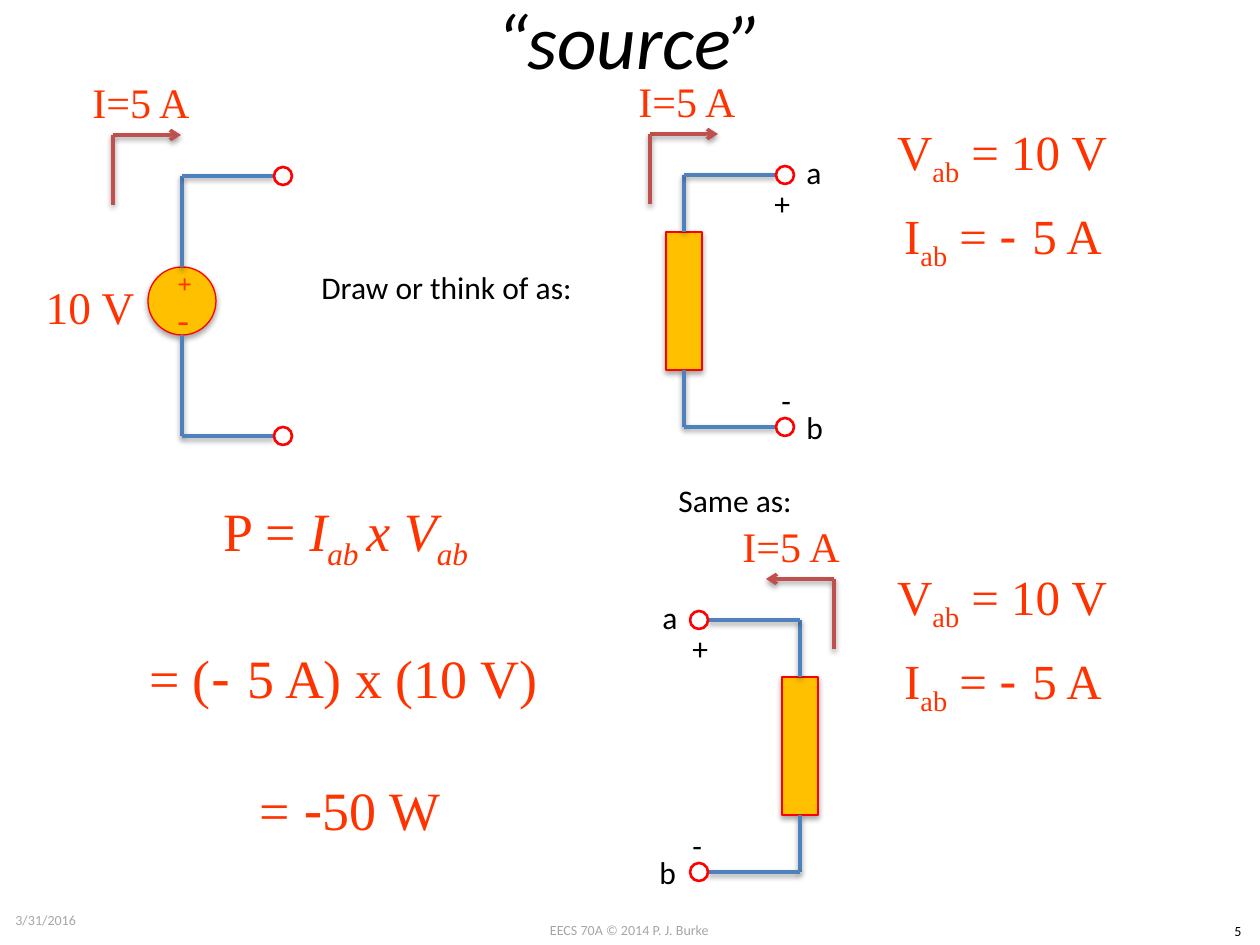
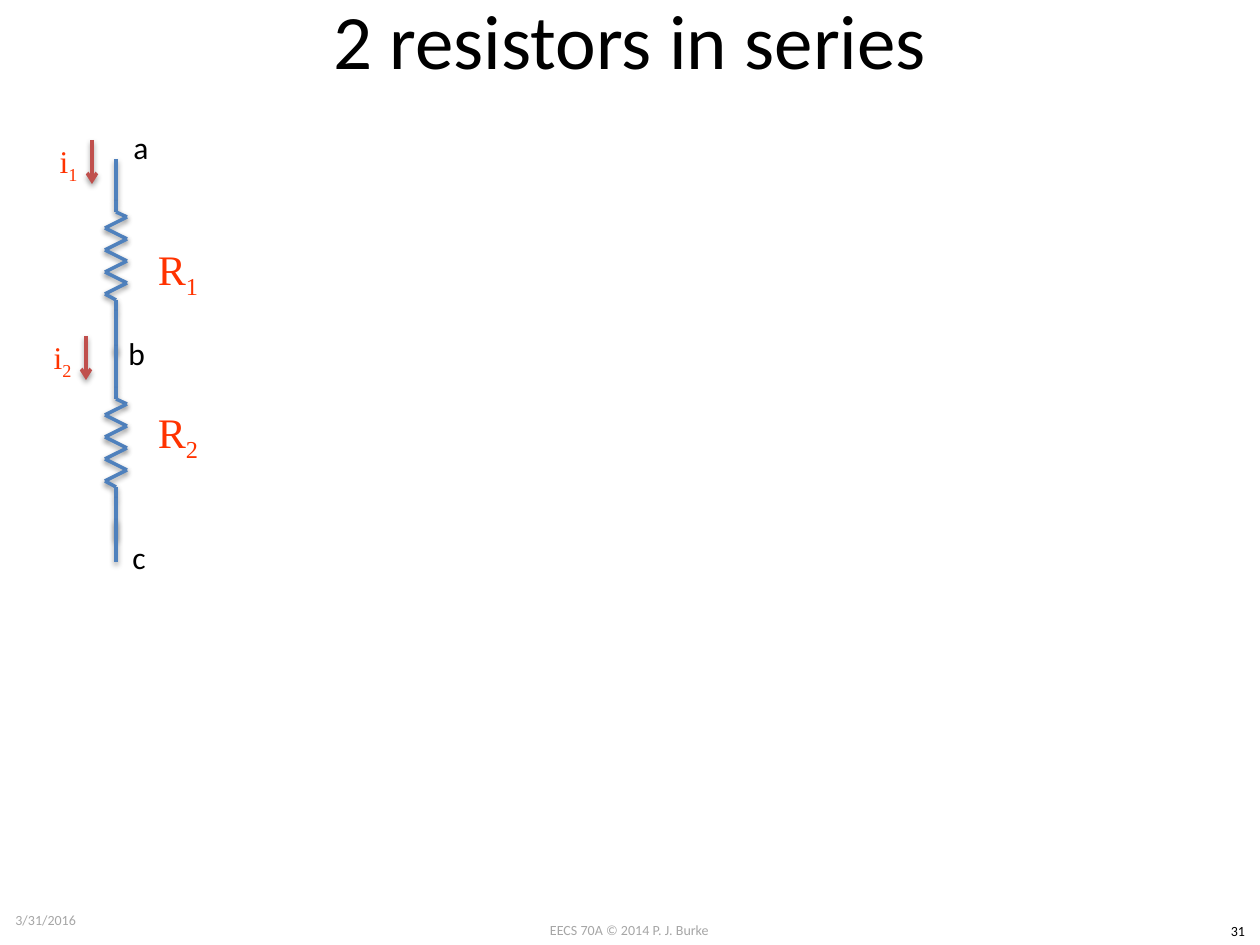
from dataclasses import dataclass
from itertools import pairwise

from lxml import etree
from pptx import Presentation
from pptx.dml.color import RGBColor
from pptx.enum.shapes import MSO_CONNECTOR, MSO_SHAPE
from pptx.enum.text import MSO_ANCHOR, PP_ALIGN
from pptx.oxml.ns import qn
from pptx.util import Emu, Pt

STRAIGHT = MSO_CONNECTOR.STRAIGHT
OVAL, RECTANGLE = MSO_SHAPE.OVAL, MSO_SHAPE.RECTANGLE
LEFT, CENTER = PP_ALIGN.LEFT, PP_ALIGN.CENTER
TOP, MIDDLE = MSO_ANCHOR.TOP, MSO_ANCHOR.MIDDLE
RECT_TOP, RECT_BOTTOM = 0, 2
EMU_PER_INCH, PX_PER_INCH = 914400, 126


@dataclass(frozen=True)
class Theme:
    # Colours
    black: str = "000000"
    white: str = "FFFFFF"
    muted: str = "A6A6A6"
    formula: str = "FF3300"
    wire: str = "4F81BD"
    current: str = "C0504D"
    element: str = "FFC000"
    outline: str = "FF0000"
    # Fonts
    sans: str = "Calibri"
    serif: str = "Times New Roman"
    minus: str = "DejaVu Sans"
    # Type sizes in points
    title: float = 44
    power: float = 30.8
    equation: float = 28
    voltage: float = 25.9
    symbol: float = 24
    label: float = 18
    footer: float = 8
    # Line widths in points
    wire_width: float = 2
    outline_width: float = 1.5


THEME = Theme()


@dataclass(frozen=True)
class Part:
    """A stretch of text with its own formatting."""
    text: str
    subscript: bool = False
    italic: bool = False
    bold: bool = False
    font: str = ""


def px(length):
    return Emu(round(length * EMU_PER_INCH / PX_PER_INCH))


def rgb(colour):
    return RGBColor.from_string(colour)


# Drawing helpers
def add_text(slide, box, paragraphs, size, colour=THEME.black, font=THEME.sans,
             align=CENTER, anchor=MIDDLE, wrap=True, gaps=()):
    """Each paragraph is a list of parts; gaps are the spaces before them."""
    shape = slide.shapes.add_textbox(*map(px, box))
    frame = shape.text_frame
    frame.word_wrap = wrap
    frame.vertical_anchor = anchor
    for index, parts in enumerate(paragraphs):
        paragraph = frame.add_paragraph() if index else frame.paragraphs[0]
        paragraph.alignment = align
        if gaps:
            paragraph.space_before = Pt(gaps[index])
        for part in parts:
            run = paragraph.add_run()
            run.text = part.text
            run.font.size = Pt(size)
            run.font.name = part.font or font
            run.font.color.rgb = rgb(colour)
            run.font.italic = part.italic
            run.font.bold = part.bold
            if part.subscript:
                run._r.get_or_add_rPr().set("baseline", "-25000")


def add_label(slide, box, text):
    add_text(slide, box, [[Part(text)]], THEME.label, align=LEFT, anchor=TOP, wrap=False)


def add_formula(slide, box, parts, size, anchor=MIDDLE):
    add_text(slide, box, [parts], size, THEME.formula, THEME.serif, anchor=anchor)


def add_shadow(effects, distance, opacity):
    shadow = etree.SubElement(effects, qn("a:outerShdw"), blurRad="40000",
                              dist=str(distance), dir="5400000", rotWithShape="0")
    colour = etree.SubElement(shadow, qn("a:srgbClr"), val=THEME.black)
    etree.SubElement(colour, qn("a:alpha"), val=str(opacity * 1000))


def add_line(slide, start, end, colour=THEME.wire, arrow=False):
    connector = slide.shapes.add_connector(STRAIGHT, *map(px, (*start, *end)))
    connector.line.color.rgb = rgb(colour)
    connector.line.width = Pt(THEME.wire_width)
    properties = connector._element.spPr
    if arrow:
        etree.SubElement(properties.find(qn("a:ln")), qn("a:tailEnd"), type="arrow")
    add_shadow(etree.SubElement(properties, qn("a:effectLst")), 20000, 38)
    return connector


def add_body(slide, kind, box, fill, width=THEME.outline_width, shadow=True):
    shape = slide.shapes.add_shape(kind, *map(px, box))
    shape.fill.solid()
    shape.fill.fore_color.rgb = rgb(fill)
    shape.line.color.rgb = rgb(THEME.outline)
    shape.line.width = Pt(width)
    shape.shadow.inherit = False
    if shadow:
        add_shadow(shape._element.spPr.find(qn("a:effectLst")), 23000, 35)
    return shape


# Title and footers shared by the slides
def add_frame(slide, title, number, italic=False):
    add_text(slide, (483, 915, 293, 30), [[Part("EECS 70A © 2014 P. J. Burke")]],
             THEME.footer, THEME.muted, anchor=TOP)
    add_text(slide, (1216, 916, 44, 30), [[Part(number)]], THEME.footer, anchor=TOP)
    add_text(slide, (3, 895, 293, 50), [[Part("3/31/2016")]],
             THEME.footer, THEME.muted, align=LEFT)
    add_text(slide, (63, -40, 1134, 158), [[Part(title, italic=italic)]], THEME.title)


# Circuit parts; direction is 1 to the right and -1 to the left
def add_terminal(slide, wire, y, direction):
    length, diameter = 92, 18
    add_line(slide, (wire + direction * length, y), (wire, y))
    center = wire + direction * (length + diameter // 2)
    add_body(slide, OVAL, (center - diameter // 2, y - diameter // 2, diameter, diameter),
             THEME.white, shadow=False)


def add_current(slide, x, top, direction, label_left):
    """Bent arrow that rises at x and then turns, with its value above."""
    width, height = 68, 70
    add_line(slide, (x, top), (x + direction * width, top), THEME.current, arrow=True)
    add_line(slide, (x, top + height), (x, top), THEME.current)
    add_formula(slide, (label_left, top - 79, 150, 92), [Part("I=5 A")], THEME.symbol)


def add_voltage_source(slide, wire, top):
    diameter, lead, height = 68, 91, 260
    left, circle_top, bottom = wire - diameter // 2, top + lead, top + height
    add_body(slide, OVAL, (left, circle_top, diameter, diameter), THEME.element, 0.75)
    sign_left = wire - 17
    add_formula(slide, (sign_left, circle_top - 5, 33, 42), [Part("+", bold=True)], 14.8)
    add_formula(slide, (sign_left, circle_top + 30, 33, 42), [Part("-")], 20)
    add_line(slide, (wire, bottom), (wire, circle_top + diameter))
    add_line(slide, (wire, circle_top), (wire, top))
    for y in (top, bottom):
        add_terminal(slide, wire, y, 1)
    add_formula(slide, (left - 117, circle_top, 118, 78), [Part("10 V")], THEME.voltage)


def add_two_terminal(slide, wire, top, direction):
    """Element between terminals a and b, on the side given by direction."""
    width, height, lead = 36, 138, 57
    bottom = top + 2 * lead + height
    body = add_body(slide, RECTANGLE, (wire - width // 2, top + lead, width, height),
                    THEME.element)
    upper = add_line(slide, (wire, top + lead), (wire, top))
    upper.begin_connect(body, RECT_TOP)
    lower = add_line(slide, (wire, bottom), (wire, bottom - lead))
    lower.end_connect(body, RECT_BOTTOM)
    for y in (top, bottom):
        add_terminal(slide, wire, y, direction)
    labels = (("a", 110, top - 28, 40), ("b", 110, bottom - 25, 43),
              ("+", 78, top + 3, 42), ("-", 85, bottom - 52, 35))
    for text, offset, y, label_width in labels:
        left = wire + offset if direction > 0 else wire - offset - label_width
        add_label(slide, (left, y, label_width, 50), text)


def add_port_values(slide, left, top):
    add_formula(slide, (left + 44, top, 248, 72),
                [Part("V"), Part("ab", subscript=True), Part(" = 10 V")],
                THEME.equation, TOP)
    add_formula(slide, (left, top + 84, 338, 72),
                [Part("I"), Part("ab", subscript=True), Part(" = "),
                 Part("- ", font=THEME.minus), Part("5 A")],
                THEME.equation, TOP)


def add_power(slide, box):
    lines = [
        [Part("P = "), Part("I", italic=True), Part("ab ", subscript=True, italic=True),
         Part("x V", italic=True), Part("ab ", subscript=True, italic=True)],
        [Part("= ("), Part("- ", font=THEME.minus), Part("5 A) x (10 V) ")],
        [Part("= "), Part("-", font=THEME.minus), Part("50 W")],
    ]
    add_text(slide, box, lines, THEME.power, THEME.formula, THEME.serif, gaps=(0, 42, 38))


def add_resistor(slide, wire, top):
    lead, stub, step, swing, teeth = 42, 11, 11, 11, 8
    start = top + lead + stub
    end = start + teeth * step
    points = [(wire, top), (wire, top + lead), (wire, start)]
    points += [(wire + swing * (-1) ** tooth, start + step // 2 + tooth * step)
               for tooth in range(teeth)]
    points += [(wire, end), (wire, end + stub), (wire, end + stub + lead)]
    for first, second in pairwise(points):
        add_line(slide, first, second)


def add_branch_current(slide, x, top, index):
    add_line(slide, (x, top), (x, top + 44), THEME.current, arrow=True)
    add_formula(slide, (x - 82, top - 9, 117, 66),
                [Part("i"), Part(index, subscript=True)], THEME.label)


# Slides
def build_source_slide(slide):
    add_frame(slide, "“source”", "5", italic=True)
    add_voltage_source(slide, 182, 176)
    add_current(slide, 113, 135, 1, 66)
    add_label(slide, (309, 262, 278, 50), "Draw or think of as:")
    add_label(slide, (666, 475, 140, 50), "Same as:")
    for wire, top, direction, label_left in ((684, 175, 1, 612), (800, 620, -1, 716)):
        add_two_terminal(slide, wire, top, direction)
        add_current(slide, wire - direction * 34, top - 41, direction, label_left)
        add_port_values(slide, 834, top - 60)
    add_power(slide, (66, 525, 568, 289))


def build_series_slide(slide):
    add_frame(slide, "2 resistors in series", "31")
    wire = 116
    for index, top, label_top in (("1", 159, 226), ("2", 346, 389)):
        add_resistor(slide, wire, top)
        add_formula(slide, (103, label_top, 150, 92),
                    [Part("R"), Part(index, subscript=True)], THEME.symbol)
    add_line(slide, (wire, 562), (wire, 520))
    for text, left, top, width in (("a", 121, 122, 40), ("b", 116, 328, 43),
                                   ("c", 120, 532, 39)):
        add_label(slide, (left, top, width, 50), text)
    for index, x, top in (("1", 92, 140), ("2", 86, 336)):
        add_branch_current(slide, x, top, index)


def main():
    presentation = Presentation()
    presentation.slide_width, presentation.slide_height = px(1260), px(945)
    blank = presentation.slide_layouts[6]
    for build in (build_source_slide, build_series_slide):
        build(presentation.slides.add_slide(blank))
    presentation.save("out.pptx")


if __name__ == "__main__":
    main()
